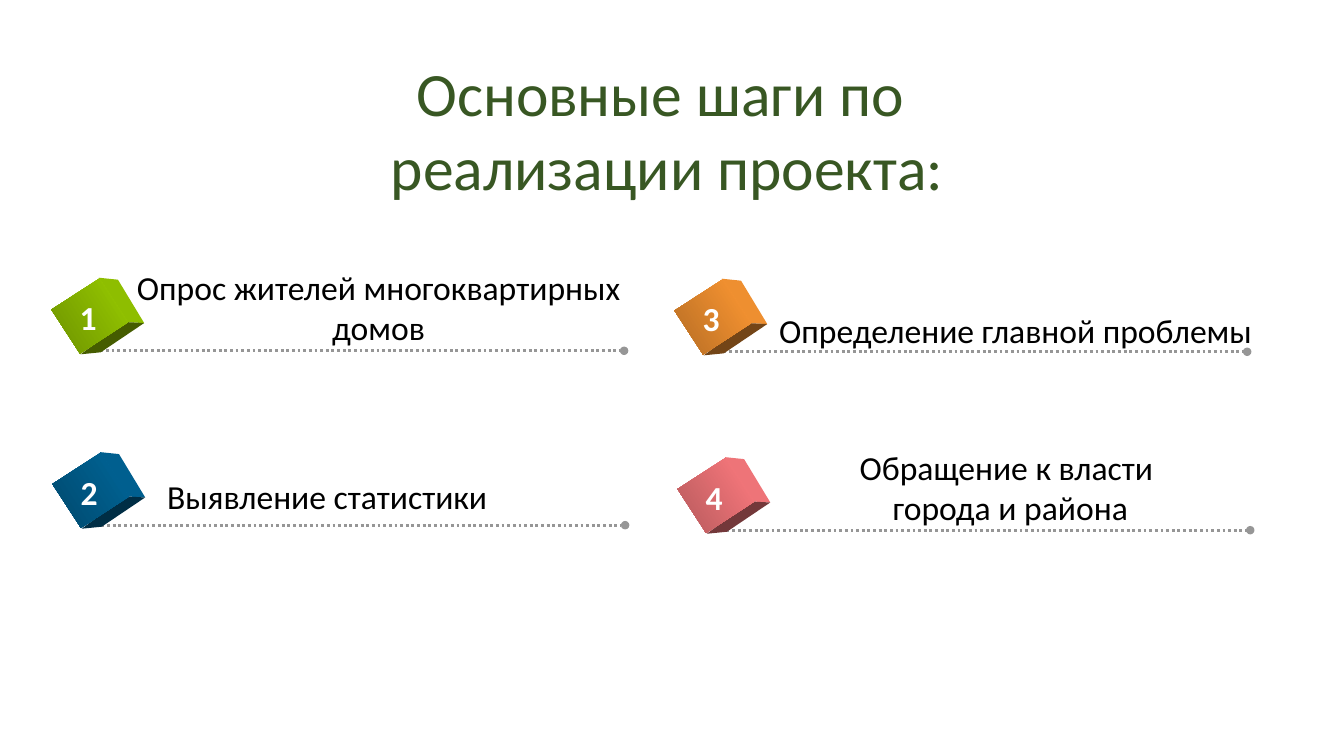
from lxml import etree
from pptx import Presentation
from pptx import util as u
from pptx.dml.color import RGBColor
from pptx.enum import dml, shapes, text
from pptx.oxml.ns import qn

FONT = "Calibri"
CUBE_WIDTH, CUBE_HEIGHT, CUBE_TURN = 0.52, 0.57, 57
LINE_LENGTH = 5.25

# Line start, cube colours (light, dark, side, base), label,
# label box (offset from line start, drop below line, width, height), centred
STEPS = [
    (0.94, 3.48, ("99CC00", "6D9200", "8EBE00", "455C00"),
     "\u00a0Опрос жителей многоквартирных \vдомов", (0.22, 0.03, 5.19, 0.91), True),
    (0.95, 5.21, ("006699", "00496D", "005F8F", "002E45"),
     "Выявление статистики", (0.59, -0.03, 3.41, 0.51), True),
    (7.12, 3.49, ("FF9933", "B66D24", "EE8F30", "734517"),
     "Определение главной проблемы", (0.51, 0.05, 4.89, 0.51), False),
    (7.15, 5.26, ("FF7C80", "B6595C", "EE7478", "73383A"),
     "Обращение к власти \vгорода и района", (1.26, 0.03, 3.22, 0.91), True),
]


def color(value):
    return RGBColor.from_string(value)


def write(box, content, size=24, fill="000000", bold=False, centred=False):
    frame = box.text_frame
    frame.word_wrap = False
    frame.auto_size = text.MSO_AUTO_SIZE.SHAPE_TO_FIT_TEXT
    para = frame.paragraphs[0]
    para.text = content
    para.alignment = text.PP_ALIGN.CENTER if centred else text.PP_ALIGN.LEFT
    for span in para.runs:
        span.font.name, span.font.size = FONT, u.Pt(size)
        span.font.bold, span.font.color.rgb = bold, color(fill)


def add_text(page, left, top, width, height, content, **style):
    box = page.shapes.add_textbox(*map(u.Inches, (left, top, width, height)))
    write(box, content, **style)


def add_title(page, left, top, width, height):
    title = page.shapes.title
    title.left, title.top, title.width, title.height = map(
        u.Inches, (left, top, width, height))
    write(title, "Основные шаги по \vреализации проекта:",
          size=44, fill="385723", centred=True)


def add_dotted_line(page, left, top):
    line = page.shapes.add_connector(
        shapes.MSO_CONNECTOR.STRAIGHT,
        *map(u.Inches, (left, top, left + LINE_LENGTH, top)))
    line.line.color.rgb = color("969696")
    line.line.width = u.Pt(2)
    line.line.dash_style = dml.MSO_LINE.ROUND_DOT
    outline = line.line._get_or_add_ln()
    etree.SubElement(outline, qn("a:tailEnd"), type="oval")
    etree.SubElement(line._element.spPr, qn("a:effectLst"))


def add_face(page, points, fill):
    outline = page.shapes.build_freeform(
        *map(u.Inches, points[0]), scale=1.0)
    outline.add_line_segments([tuple(map(u.Inches, point)) for point in points[1:]])
    face = outline.convert_to_shape()
    face.shadow.inherit = False
    face.fill.solid()
    face.fill.fore_color.rgb = color(fill)
    face.line.fill.background()


def add_cube(page, left, top, colors):
    """Place a turned square whose unturned box starts at left, top."""
    light, dark, side, base = colors
    middle_x, middle_y = left + CUBE_WIDTH / 2, top + CUBE_HEIGHT / 2

    def around(*offsets):
        return [(middle_x + x, middle_y + y) for x, y in offsets]

    # Depth faces
    add_face(page, around((0.09, -0.38), (0.28, -0.36), (0.54, 0.07), (0.35, 0.06)), side)
    add_face(page, around((-0.09, 0.38), (0.35, 0.06), (0.54, 0.07), (0.11, 0.36)), base)
    # Front face
    front = page.shapes.add_shape(
        shapes.MSO_SHAPE.RECTANGLE,
        *map(u.Inches, (left, top, CUBE_WIDTH, CUBE_HEIGHT)))
    front.rotation = CUBE_TURN
    front.shadow.inherit = False
    front.line.fill.background()
    front.fill.gradient()
    front.fill.gradient_angle = 270
    for stop, value in zip(front.fill.gradient_stops, (light, dark)):
        stop.color.rgb = color(value)


def add_step(page, number, left, top, colors, label, label_box, centred):
    """Place a numbered step relative to the start of its dotted line."""
    offset, drop, width, height = label_box
    add_dotted_line(page, left, top)
    add_cube(page, left - 0.31, top - 0.63, colors)
    add_text(page, left + offset, top + drop - height, width, height,
             label, centred=centred)
    add_text(page, left - 0.25, top - 0.58, 0.39, 0.5,
             str(number), fill="FFFFFF", bold=True)


def main():
    deck = Presentation()
    deck.slide_width, deck.slide_height = u.Inches(13.33), u.Inches(7.5)
    page = deck.slides.add_slide(deck.slide_layouts.get_by_name("Title Only"))
    add_title(page, 3.75, 0.49, 5.74, 1.58)
    for number, step in enumerate(STEPS, start=1):
        add_step(page, number, *step)
    deck.save("out.pptx")


if __name__ == "__main__":
    main()
